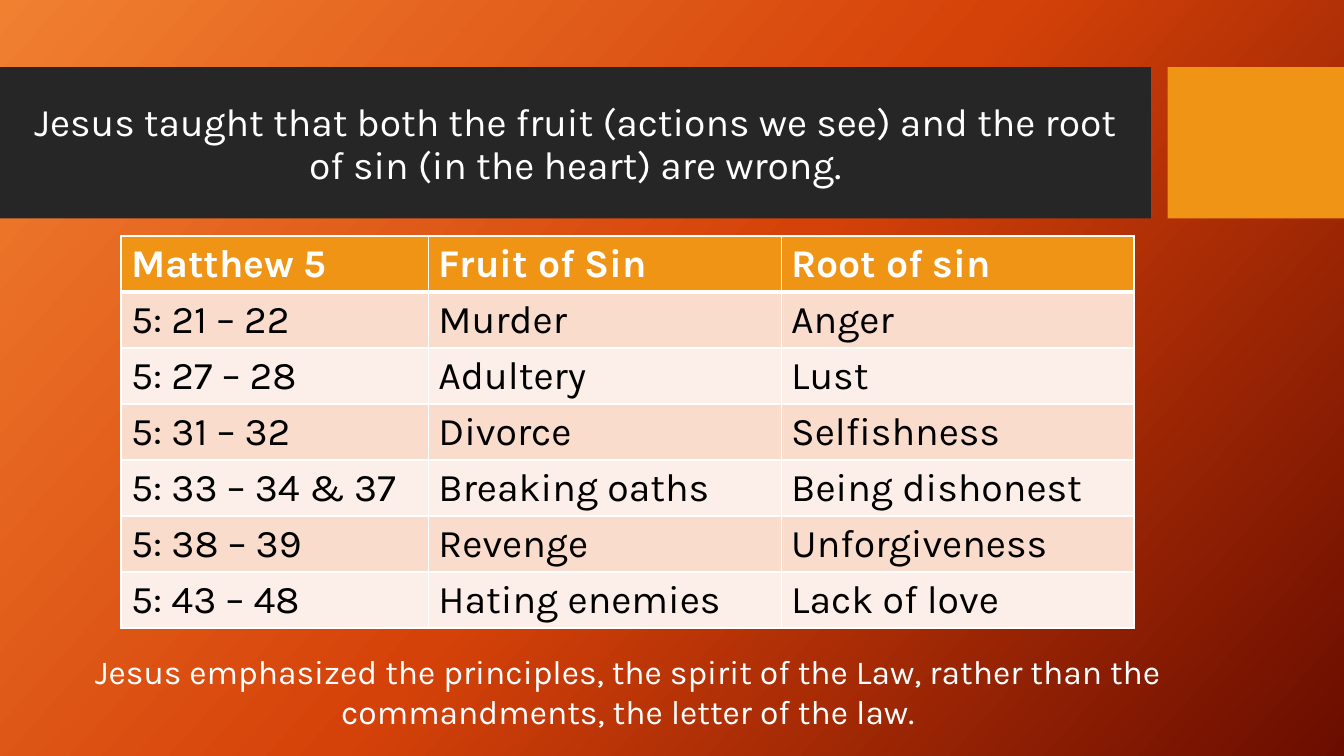
import copy
import pptx
import pptx.util
import pptx.dml.color
import pptx.enum.shapes
import pptx.enum.text
import pptx.oxml
import pptx.oxml.ns
from dataclasses import dataclass


@dataclass(frozen=True)
class Theme:
    font: str = "Karla"
    white: str = "FFFFFF"
    ink: str = "000000"
    banner: str = "262626"
    accent: str = "F09415"
    stripes: tuple = ("F9DCCC", "FCEEE8")
    backdrop: tuple = ((0, "F18031"), (50, "D54209"), (100, "6A0D00"))
    backdrop_angle: int = 42
    title_size: float = 27.9
    table_size: float = 28
    note_size: float = 24


COLUMNS, ROWS = 160, 90  # square grid units over the slide

TABLE_ROWS = [
    ("Matthew 5", "Fruit of Sin", "Root of sin"),
    ("5: 21 – 22", "Murder", "Anger"),
    ("5: 27 – 28", "Adultery", "Lust"),
    ("5: 31 – 32", "Divorce", "Selfishness"),
    ("5: 33 – 34 & 37", "Breaking oaths", "Being dishonest"),
    ("5: 38 – 39", "Revenge", "Unforgiveness"),
    ("5: 43 – 48", "Hating enemies", "Lack of love"),
]


def rgb(value):
    return pptx.dml.color.RGBColor.from_string(value)


def write(frame, text, *, font, size, color, bold=False, align=None, spacing=None):
    para = frame.paragraphs[0]
    para.alignment = align
    para.line_spacing = spacing
    para.space_before = pptx.util.Pt(0)
    span = para.add_run()
    span.text = text
    span.font.name = font
    span.font.size = pptx.util.Pt(size)
    span.font.bold = bold
    span.font.color.rgb = rgb(color)


class SlideBuilder:
    def __init__(self, deck, theme):
        self.theme = theme
        self.column = deck.slide_width / COLUMNS
        self.row = deck.slide_height / ROWS
        self.page = deck.slides.add_slide(deck.slide_layouts[5])

    def place(self, left, top, width, height):
        return (round(left * self.column), round(top * self.row),
                round(width * self.column), round(height * self.row))

    def background(self):
        fill = self.page.background.fill
        fill.gradient()
        fill.gradient_angle = 360 - self.theme.backdrop_angle
        stops = self.page.element.find(".//" + pptx.oxml.ns.qn("a:gsLst"))
        stops.insert(1, copy.deepcopy(stops[0]))
        for stop, (position, color) in zip(fill.gradient_stops, self.theme.backdrop):
            stop.position = position / 100
            stop.color.rgb = rgb(color)

    def block(self, *area, color):
        shape = self.page.shapes.add_shape(
            pptx.enum.shapes.MSO_SHAPE.RECTANGLE, *self.place(*area))
        shape.shadow.inherit = False
        shape.fill.solid()
        shape.fill.fore_color.rgb = rgb(color)
        shape.line.fill.background()

    def title(self, text, *area, bottom):
        box = self.page.shapes.title
        box.left, box.top, box.width, box.height = self.place(*area)
        box.element.getparent().append(box.element)  # in front of the banner
        frame = box.text_frame
        frame.word_wrap = True
        frame.auto_size = pptx.enum.text.MSO_AUTO_SIZE.NONE
        frame.vertical_anchor = pptx.enum.text.MSO_ANCHOR.MIDDLE
        frame.margin_bottom = round(bottom * self.row)
        write(frame, text, font=self.theme.font, size=self.theme.title_size,
              color=self.theme.white, align=pptx.enum.text.PP_ALIGN.CENTER, spacing=0.9)

    def note(self, text, *area):
        frame = self.page.shapes.add_textbox(*self.place(*area)).text_frame
        frame.word_wrap = True
        write(frame, text, font=self.theme.font, size=self.theme.note_size,
              color=self.theme.white, align=pptx.enum.text.PP_ALIGN.CENTER)

    def table(self, rows, left, top, widths, height):
        theme = self.theme
        area = self.place(left, top, sum(widths), height * len(rows))
        table = self.page.shapes.add_table(len(rows), len(widths), *area).table
        table.horz_banding = False
        for column, width in zip(table.columns, widths):
            column.width = round(width * self.column)
        for index, texts in enumerate(rows):
            header = index == 0
            table.rows[index].height = round(height * self.row)
            for cell, text in zip(table.rows[index].cells, texts):
                write(cell.text_frame, text, font=theme.font, size=theme.table_size,
                      color=theme.white if header else theme.ink, bold=header)
                self.borders(cell, top=3 if index == 1 else 1, bottom=3 if header else 1)
                cell.fill.solid()
                cell.fill.fore_color.rgb = rgb(
                    theme.accent if header else theme.stripes[(index - 1) % 2])

    def borders(self, cell, top, bottom):
        properties = cell._tc.get_or_add_tcPr()
        for side, width in (("L", 1), ("R", 1), ("T", top), ("B", bottom)):
            properties.append(pptx.oxml.parse_xml(
                f'<a:ln{side} {pptx.oxml.ns.nsdecls("a")} w="{pptx.util.Pt(width)}">'
                f'<a:solidFill><a:srgbClr val="{self.theme.white}"/></a:solidFill>'
                f'</a:ln{side}>'))


def main():
    deck = pptx.Presentation()
    deck.slide_width = pptx.util.Inches(13.33)
    deck.slide_height = pptx.util.Inches(7.5)
    theme = Theme()
    slide = SlideBuilder(deck, theme)

    # Backdrop and banner
    slide.background()
    slide.block(0, 8, 137, 18, color=theme.banner)
    slide.block(139, 8, 21, 18, color=theme.accent)
    slide.title("Jesus taught that both the fruit (actions we see) and the root "
                "of sin (in the heart) are wrong.",
                1.9, 12.6, 133.2, 14.2, bottom=5.4)

    # Fruit and root comparison
    slide.table(TABLE_ROWS, 14.4, 28.1, widths=(36.6, 42, 42), height=6.67)

    # Closing thought
    slide.note("Jesus emphasized the principles, the spirit of the Law, rather than "
               "the commandments, the letter of the law.",
               -1.1, 76.9, 151.7, 15.7)

    deck.save("out.pptx")


if __name__ == "__main__":
    main()
